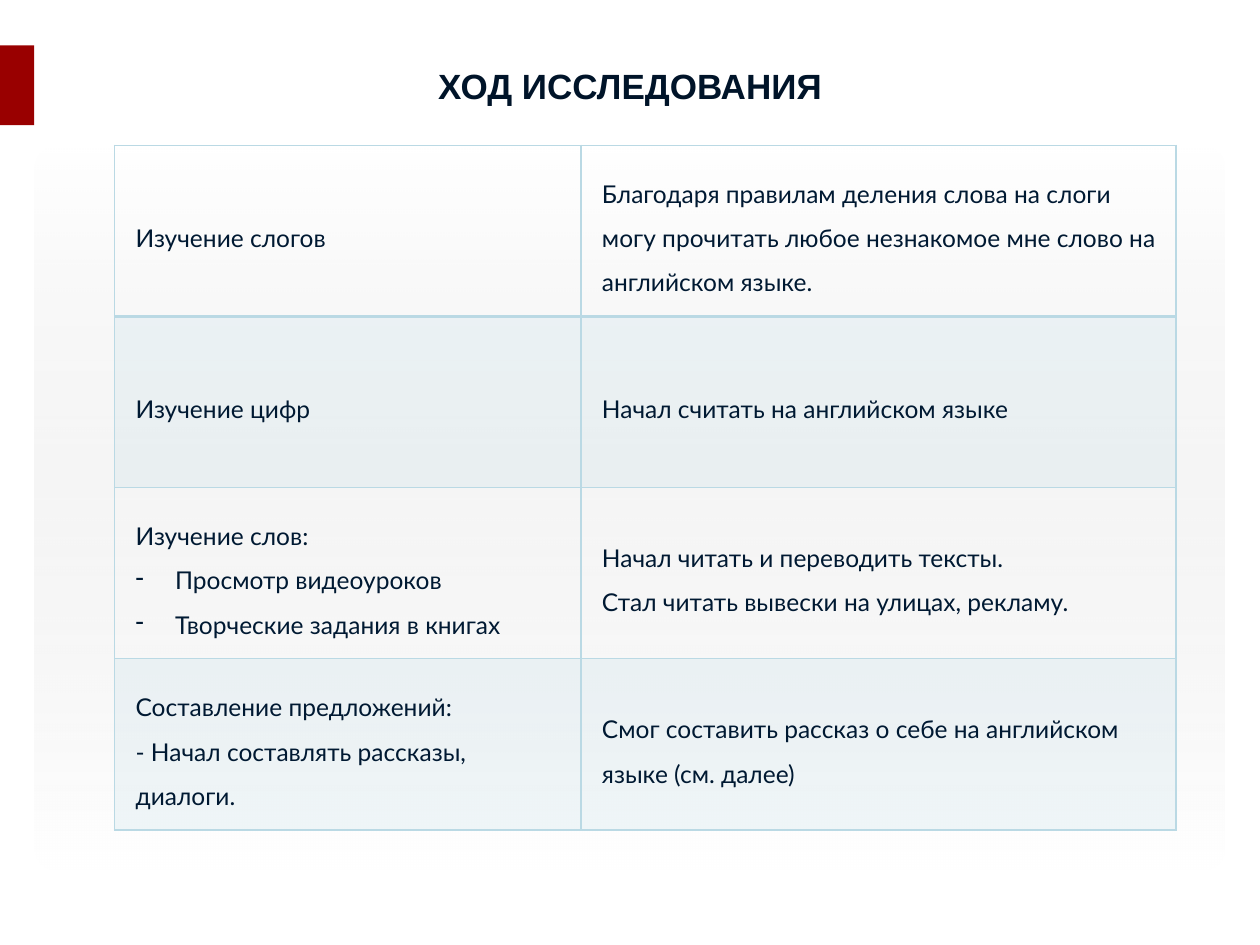
from dataclasses import dataclass

from lxml import etree
from pptx import Presentation
from pptx import util as u
from pptx.dml.color import RGBColor
from pptx.enum import shapes, text
from pptx.oxml.ns import qn

Pt = u.Pt


@dataclass(frozen=True)
class Theme:
    white: str = "FFFFFF"
    grey: str = "B6B6B6"
    accent: str = "990000"
    title: str = "001429"
    body: str = "001932"
    tint: str = "BAD9E4"
    title_font: str = "Arial"
    body_font: str = "Lato"
    title_size: int = 20
    body_size: int = 14


def apply(target, values):
    for name, value in values.items():
        setattr(target, name, value)


def add_color(parent, color, alpha=100):
    clr = etree.SubElement(parent, qn("a:srgbClr"), val=color)
    if alpha < 100:
        etree.SubElement(clr, qn("a:alpha"), val=str(alpha * 1000))


def set_alpha(fill, alpha):
    """Make a solid python-pptx fill translucent; alpha is in percent."""
    clr = fill._xPr.find(qn("a:solidFill"))[0]
    etree.SubElement(clr, qn("a:alpha"), val=str(alpha * 1000))


class Deck:
    """Holds the theme and the slide being built; lengths are in points."""

    def __init__(self, theme, width, height):
        self.theme = theme
        self.prs = Presentation()
        self.prs.slide_width, self.prs.slide_height = Pt(width), Pt(height)
        self.s = self.prs.slides.add_slide(self.prs.slide_layouts[5])

    def font(self, font, name, size, color, bold=False):
        apply(font, {"name": name, "size": Pt(size), "bold": bold})
        font.color.rgb = RGBColor.from_string(color)

    def block(self, box, color, alpha=100, kind=shapes.MSO_SHAPE.RECTANGLE):
        sp = self.s.shapes.add_shape(kind, *map(Pt, box))
        sp.shadow.inherit = False
        sp.line.fill.background()
        sp.fill.solid()
        sp.fill.fore_color.rgb = RGBColor.from_string(color)
        if alpha < 100:
            set_alpha(sp.fill, alpha)
        return sp

    def gradient_panel(self, box, stops, corner):
        """Rounded panel shaded downwards; stops are (percent, color, alpha)."""
        sp = self.block(box, self.theme.white,
                        kind=shapes.MSO_SHAPE.ROUNDED_RECTANGLE)
        sp.adjustments[0] = corner
        solid = sp._element.spPr.find(qn("a:solidFill"))
        grad = etree.Element(qn("a:gradFill"), rotWithShape="1")
        stop_list = etree.SubElement(grad, qn("a:gsLst"))
        for pos, color, alpha in stops:
            stop = etree.SubElement(stop_list, qn("a:gs"), pos=str(pos * 1000))
            add_color(stop, color, alpha)
        etree.SubElement(grad, qn("a:lin"), ang="5400000", scaled="0")
        solid.getparent().replace(solid, grad)

    def title(self, box, words):
        t, sp = self.theme, self.s.shapes.title
        apply(sp, dict(zip(("left", "top", "width", "height"), map(Pt, box))))
        self.s.shapes._spTree.append(sp._element)
        tf = sp.text_frame
        apply(tf, {"text": words, "word_wrap": True,
                   "vertical_anchor": text.MSO_ANCHOR.MIDDLE})
        p = tf.paragraphs[0]
        p.alignment = text.PP_ALIGN.CENTER
        self.font(p.runs[0].font, t.title_font, t.title_size, t.title, True)

    def table(self, left, top, cols, row_height, rows):
        frame = self.s.shapes.add_table(
            len(rows), len(cols), Pt(left), Pt(top),
            Pt(sum(cols)), Pt(row_height * len(rows)))
        tbl = frame.table
        apply(tbl, {"first_row": False, "horz_banding": False})
        for col, width in zip(tbl.columns, cols):
            col.width = Pt(width)
        for i, row in enumerate(rows):
            tbl.rows[i].height = Pt(row_height)
            for j, (lines, align) in enumerate(row):
                self.cell(tbl.cell(i, j), lines, align,
                          shaded=i % 2 == 1, bottom=2 if i == 0 else 1,
                          top=2 if i == 1 else 1)

    def cell(self, cell, lines, align, shaded, top, bottom):
        apply(cell, {"margin_left": Pt(5), "margin_right": Pt(5),
                     "margin_top": 0, "margin_bottom": 0,
                     "vertical_anchor": text.MSO_ANCHOR.MIDDLE})
        self.borders(cell, {"L": 1, "R": 1, "T": top, "B": bottom})
        if shaded:
            cell.fill.solid()
            cell.fill.fore_color.rgb = RGBColor.from_string(self.theme.tint)
            set_alpha(cell.fill, 20)
        else:
            cell.fill.background()
        tf = cell.text_frame
        for i, line in enumerate(lines):
            p = tf.paragraphs[0] if i == 0 else tf.add_paragraph()
            self.paragraph(p, line, align)

    def paragraph(self, p, line, align):
        """A line that starts with a bullet mark becomes a dashed list item."""
        t = self.theme
        listed = line.startswith("•")
        apply(p, {"alignment": align, "line_spacing": 1.5})
        pPr = p._p.get_or_add_pPr()
        pPr.set("marL", str(Pt(29.5 if listed else 7)))
        pPr.set("indent", str(Pt(-22.5 if listed else 0)))
        if listed:
            etree.SubElement(pPr, qn("a:buChar"), char="-")
        r = p.add_run()
        r.text = line.lstrip("•")
        self.font(r.font, t.body_font, t.body_size, t.body)

    def borders(self, cell, widths):
        tcPr = cell._tc.get_or_add_tcPr()
        for side, width in widths.items():
            ln = etree.SubElement(tcPr, qn(f"a:ln{side}"), w=str(Pt(width)))
            add_color(etree.SubElement(ln, qn("a:solidFill")), self.theme.tint)


def main():
    t = Theme()
    deck = Deck(t, 720, 540)
    band_top, band_height = 26, 45.5
    deck.block((0, band_top, 720, band_height), t.white, alpha=55)
    deck.gradient_panel((19.5, 83, 680, 414),
                        [(0, t.grey, 0), (100, t.white, 51)], corner=0.03)
    deck.block((0, band_top, 19.5, band_height), t.accent)
    deck.title((36, band_top, 648, band_height), "ХОД ИССЛЕДОВАНИЯ")

    left, just = text.PP_ALIGN.LEFT, text.PP_ALIGN.JUSTIFY
    deck.table(65.5, 83, (266.5, 340), 97.8, [
        [(["Изучение слогов"], just),
         (["Благодаря правилам деления слова на слоги могу прочитать "
           "любое незнакомое мне слово на английском языке."], left)],
        [(["Изучение цифр"], just),
         (["Начал считать на английском языке"], left)],
        [(["Изучение слов:", "•Просмотр видеоуроков",
           "•Творческие задания в книгах"], just),
         (["Начал читать и переводить тексты.",
           "Стал читать вывески на улицах, рекламу."], left)],
        [(["Составление предложений:",
           "- Начал составлять рассказы, диалоги."], left),
         (["Смог составить рассказ о себе на английском языке (см. далее)"],
          left)],
    ])
    deck.prs.save("out.pptx")


if __name__ == "__main__":
    main()
